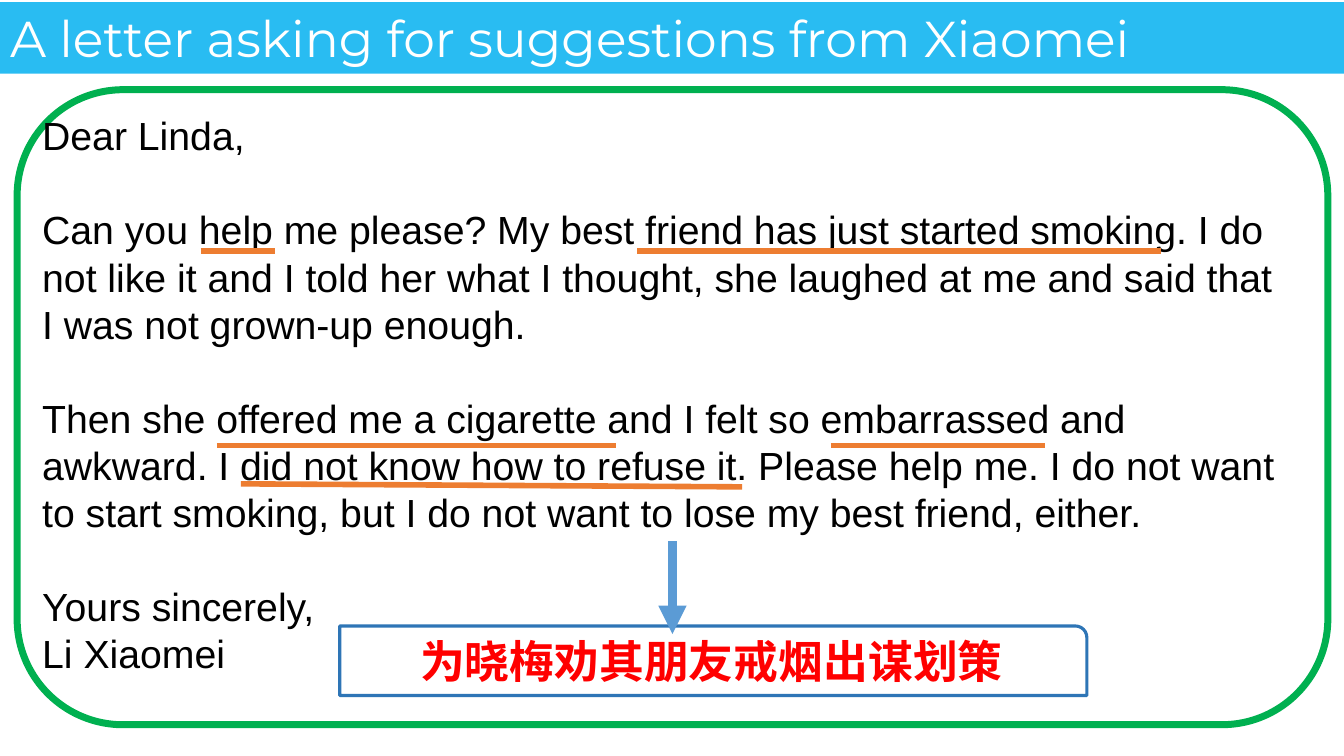
from lxml import etree
from pptx import Presentation
from pptx.dml.color import RGBColor
from pptx.enum.shapes import MSO_CONNECTOR, MSO_SHAPE
from pptx.enum.text import MSO_ANCHOR, MSO_AUTO_SIZE, PP_ALIGN
from pptx.oxml.ns import qn
from pptx.util import Inches, Pt

SKY = RGBColor(0x00, 0xB0, 0xF0)
GREEN = RGBColor(0x00, 0xB0, 0x50)
ORANGE = RGBColor(0xED, 0x7D, 0x31)
BLUE = RGBColor(0x5B, 0x9B, 0xD5)
DARK_BLUE = RGBColor(0x2E, 0x75, 0xB6)
RED = RGBColor(0xFF, 0x00, 0x00)
WHITE = RGBColor(0xFF, 0xFF, 0xFF)
BLACK = RGBColor(0x00, 0x00, 0x00)

LINE_HEIGHT = Pt(33.6)
LETTER = [
    ("Dear Linda,", False),
    ("Can you help me please? My best friend has just started smoking. "
     "I do not like it and I told her what I thought, she laughed at me "
     "and said that I was not grown-up enough.", True),
    ("Then she offered me a cigarette and I felt so embarrassed and awkward. "
     "I did not know how to refuse it. Please help me. I do not want to start "
     "smoking, but I do not want to lose my best friend, either.", True),
    ("Yours sincerely,", True),
    ("Li Xiaomei", False),
]
UNDERLINES = [
    (8.24, 4.42, 10.36, 4.42),
    (6.32, 2.49, 11.52, 2.49),
    (1.99, 2.49, 2.73, 2.49),
    (2.39, 4.8, 7.36, 4.83),
    (2.15, 4.42, 6.11, 4.42),
]


def add_run(paragraph, text, font_name, size, color, bold=False):
    run = paragraph.add_run()
    run.text = text
    run.font.name = font_name
    run.font.size = Pt(size)
    run.font.bold = bold
    run.font.color.rgb = color


def add_title(slide, text):
    title = slide.shapes.title
    title.left, title.top = Inches(0), Inches(0.02)
    title.width, title.height = Inches(13.33), Inches(0.71)
    title.fill.solid()
    title.fill.fore_color.rgb = SKY
    color = title.fill._xPr.find(qn("a:solidFill"))[0]
    etree.SubElement(color, qn("a:alpha")).set("val", "84000")
    frame = title.text_frame
    frame.auto_size = MSO_AUTO_SIZE.NONE
    frame.vertical_anchor = MSO_ANCHOR.TOP
    paragraph = frame.paragraphs[0]
    paragraph.alignment = PP_ALIGN.LEFT
    add_run(paragraph, text, "Montserrat", 36, WHITE)


def add_outline(slide, kind, left, top, width, height, color, weight):
    shape = slide.shapes.add_shape(
        kind, Inches(left), Inches(top), Inches(width), Inches(height))
    shape.shadow.inherit = False
    shape.fill.background()
    shape.line.color.rgb = color
    shape.line.width = Pt(weight)
    return shape


def add_letter(slide):
    box = slide.shapes.add_textbox(
        Inches(0.32), Inches(1.06), Inches(12.55), Inches(5.76))
    frame = box.text_frame
    frame.word_wrap = True
    for index, (text, gap_above) in enumerate(LETTER):
        paragraph = frame.add_paragraph() if index else frame.paragraphs[0]
        paragraph.line_spacing = LINE_HEIGHT
        if gap_above:
            paragraph.space_before = LINE_HEIGHT
        add_run(paragraph, text, "Arial", 28, BLACK)


def add_line(slide, x1, y1, x2, y2, color, weight, arrow=False):
    line = slide.shapes.add_connector(
        MSO_CONNECTOR.STRAIGHT, Inches(x1), Inches(y1), Inches(x2), Inches(y2))
    line.line.color.rgb = color
    line.line.width = Pt(weight)
    if arrow:
        outline = line.line._get_or_add_ln()
        etree.SubElement(outline, qn("a:tailEnd")).set("type", "triangle")
    etree.SubElement(line._element.spPr, qn("a:effectLst"))


def add_task(slide, text):
    shape = add_outline(slide, MSO_SHAPE.ROUND_1_RECTANGLE,
                        3.37, 6.21, 7.41, 0.69, DARK_BLUE, 2.25)
    frame = shape.text_frame
    frame.vertical_anchor = MSO_ANCHOR.MIDDLE
    paragraph = frame.paragraphs[0]
    paragraph.alignment = PP_ALIGN.CENTER
    add_run(paragraph, text, "Calibri", 32, RED, bold=True)


def main():
    presentation = Presentation()
    presentation.slide_width = Inches(13.33)
    presentation.slide_height = Inches(7.5)
    slide = presentation.slides.add_slide(presentation.slide_layouts[5])
    add_title(slide, "A letter asking for suggestions from Xiaomei")
    add_outline(slide, MSO_SHAPE.ROUNDED_RECTANGLE,
                0.17, 0.89, 13, 6.3, GREEN, 5)
    add_letter(slide)
    for ends in UNDERLINES:
        add_line(slide, *ends, ORANGE, 4)
    add_task(slide, "为晓梅劝其朋友戒烟出谋划策")
    add_line(slide, 6.67, 5.37, 6.67, 6.29, BLUE, 6.75, arrow=True)
    presentation.save("out.pptx")


if __name__ == "__main__":
    main()
